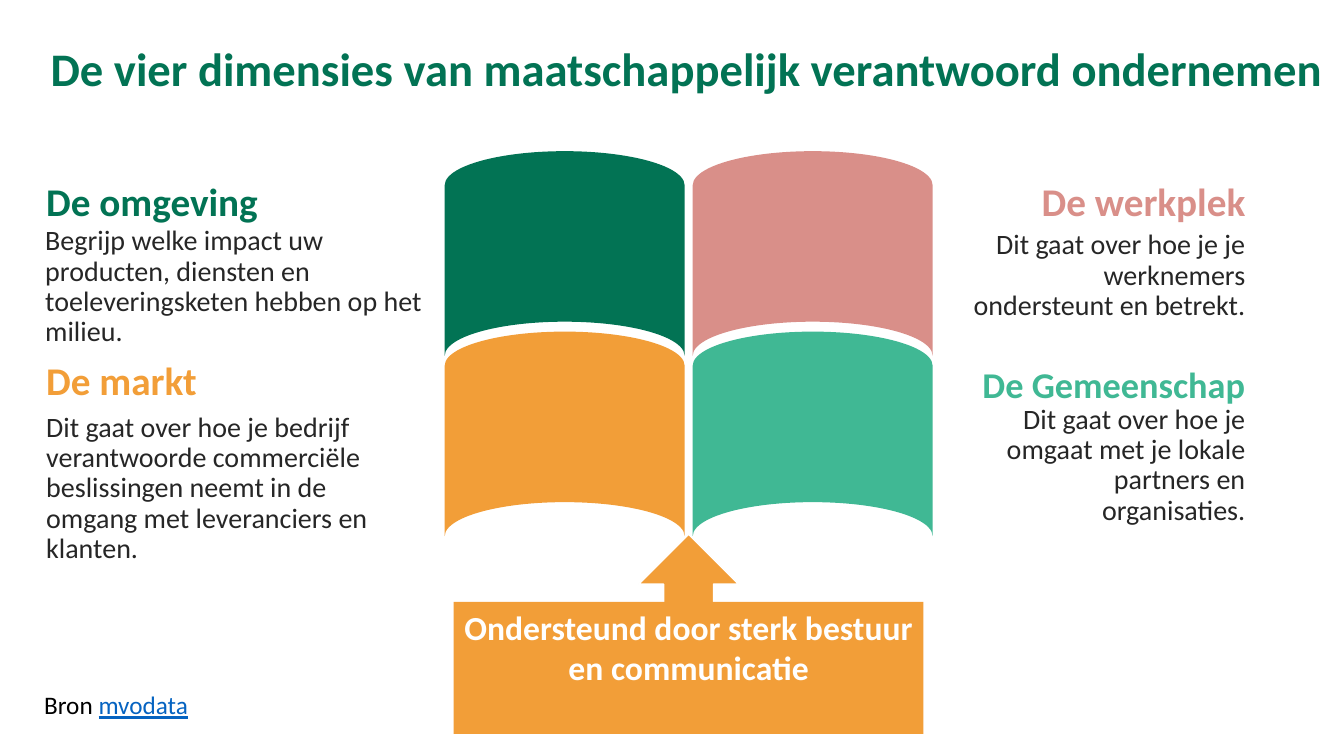
from dataclasses import dataclass

from pptx import Presentation
from pptx.dml.color import RGBColor
from pptx.enum.shapes import MSO_SHAPE
from pptx.enum.text import MSO_ANCHOR, PP_ALIGN
from pptx.util import Inches, Pt

LEFT, CENTER, RIGHT = PP_ALIGN.LEFT, PP_ALIGN.CENTER, PP_ALIGN.RIGHT
TOP = MSO_ANCHOR.TOP
TILE = MSO_SHAPE.FLOWCHART_STORED_DATA
CALLOUT = MSO_SHAPE.RIGHT_ARROW_CALLOUT
RECTANGLE = MSO_SHAPE.RECTANGLE


@dataclass(frozen=True)
class Theme:
    font: str = "Calibri"
    green: str = "027354"
    pink: str = "D98F89"
    orange: str = "F29E38"
    mint: str = "40B894"
    body: str = "262626"
    black: str = "000000"
    white: str = "FFFFFF"
    link: str = "0563C1"
    title_size: float = 33.3
    heading_size: float = 28
    small_heading_size: float = 25.9
    body_size: float = 20
    callout_size: float = 24
    source_size: float = 18


THEME = Theme()

# Heading, body text, colour, heading size, heading box, body box, alignment
DIMENSIONS = [
    ("De omgeving",
     "Begrijp welke impact uw producten, diensten en toeleveringsketen hebben op het milieu.",
     THEME.green, THEME.heading_size, (0.36, 1.76, 3.27, 0.77), (0.35, 2.2, 4.15, 0.77), LEFT),
    ("De werkplek",
     "Dit gaat over hoe je je werknemers ondersteunt en betrekt.",
     THEME.pink, THEME.heading_size, (9.51, 1.76, 2.94, 0.77), (9.51, 2.24, 2.94, 0.77), RIGHT),
    ("De markt",
     "Dit gaat over hoe je bedrijf verantwoorde commerciële beslissingen neemt "
     "in de omgang met leveranciers en klanten.",
     THEME.orange, THEME.heading_size, (0.36, 3.54, 2.94, 0.77), (0.36, 4.05, 3.9, 0.77), LEFT),
    ("De Gemeenschap",
     "Dit gaat over hoe je omgaat met je lokale partners en organisaties.",
     THEME.mint, THEME.small_heading_size, (9.51, 3.59, 2.94, 0.77), (9.51, 3.97, 2.94, 0.77), RIGHT),
]


def set_font(font, size, color, bold=False):
    font.name = THEME.font
    font.size = Pt(size)
    font.bold = bold
    font.color.rgb = RGBColor.from_string(color)


def add_text(slide, box, text, size, color, bold=False, alignment=LEFT, line_spacing=0.9):
    shape = slide.shapes.add_textbox(*map(Inches, box))
    shape.text_frame.word_wrap = True
    paragraph = shape.text_frame.paragraphs[0]
    paragraph.text = text
    paragraph.alignment = alignment
    paragraph.line_spacing = line_spacing
    set_font(paragraph.font, size, color, bold)
    return paragraph


def add_filled_shape(slide, kind, box, color, rotation=0):
    """Place a shape so that, once turned by a quarter, it fills the box."""
    left, top, width, height = box
    if rotation:
        left += (width - height) / 2
        top += (height - width) / 2
        width, height = height, width
    shape = slide.shapes.add_shape(kind, *map(Inches, (left, top, width, height)))
    shape.rotation = rotation
    shape.shadow.inherit = False
    shape.fill.solid()
    shape.fill.fore_color.rgb = RGBColor.from_string(color)
    shape.line.fill.background()
    return shape


def add_tiles(slide, box):
    left, top, width, height = box
    column_step, row_step = 2.46, 1.79
    for index, dimension in enumerate(DIMENSIONS):
        row, column = divmod(index, 2)
        tile_box = (left + column * column_step, top + row * row_step,
                    width - column_step, height - row_step)
        add_filled_shape(slide, TILE, tile_box, dimension[2], rotation=90)


def add_dimension_texts(slide):
    for heading, body, color, size, heading_box, body_box, alignment in DIMENSIONS:
        add_text(slide, heading_box, heading, size, color, True, alignment)
        add_text(slide, body_box, body, THEME.body_size, THEME.body, False, alignment)


def add_support_callout(slide, box):
    left, top, width, height = box
    arrow = add_filled_shape(slide, CALLOUT, box, THEME.orange, rotation=270)
    arrow.line.color.rgb = RGBColor.from_string(THEME.white)
    arrow.line.width = Pt(1)

    label_height = 1.31
    label_box = (left, top + height - label_height, width, label_height)
    label = add_filled_shape(slide, RECTANGLE, label_box, THEME.orange)
    label.text_frame.word_wrap = True
    label.text_frame.vertical_anchor = TOP
    paragraph = label.text_frame.paragraphs[0]
    paragraph.text = "Ondersteund door sterk bestuur en communicatie"
    paragraph.alignment = CENTER
    set_font(paragraph.font, THEME.callout_size, THEME.white, True)


def add_source(slide, box):
    paragraph = add_text(slide, box, "Bron ", THEME.source_size, THEME.black, line_spacing=1.0)
    name = paragraph.add_run()
    name.text = "mvodata"
    name.font.underline = True
    name.font.color.rgb = RGBColor.from_string(THEME.link)


def main():
    presentation = Presentation()
    presentation.slide_width = Inches(13.33)
    presentation.slide_height = Inches(7.5)
    slide = presentation.slides.add_slide(presentation.slide_layouts[6])

    add_tiles(slide, (4.41, 1.5, 4.84, 3.82))
    add_text(slide, (0.3, 0.41, 13.03, 1.04),
             "De vier dimensies van maatschappelijk verantwoord ondernemen",
             THEME.title_size, THEME.green, True, CENTER)
    add_dimension_texts(slide)
    add_source(slide, (0.34, 6.79, 3.3, 0.41))
    add_support_callout(slide, (4.5, 5.3, 4.66, 1.98))

    presentation.save("out.pptx")


if __name__ == "__main__":
    main()
